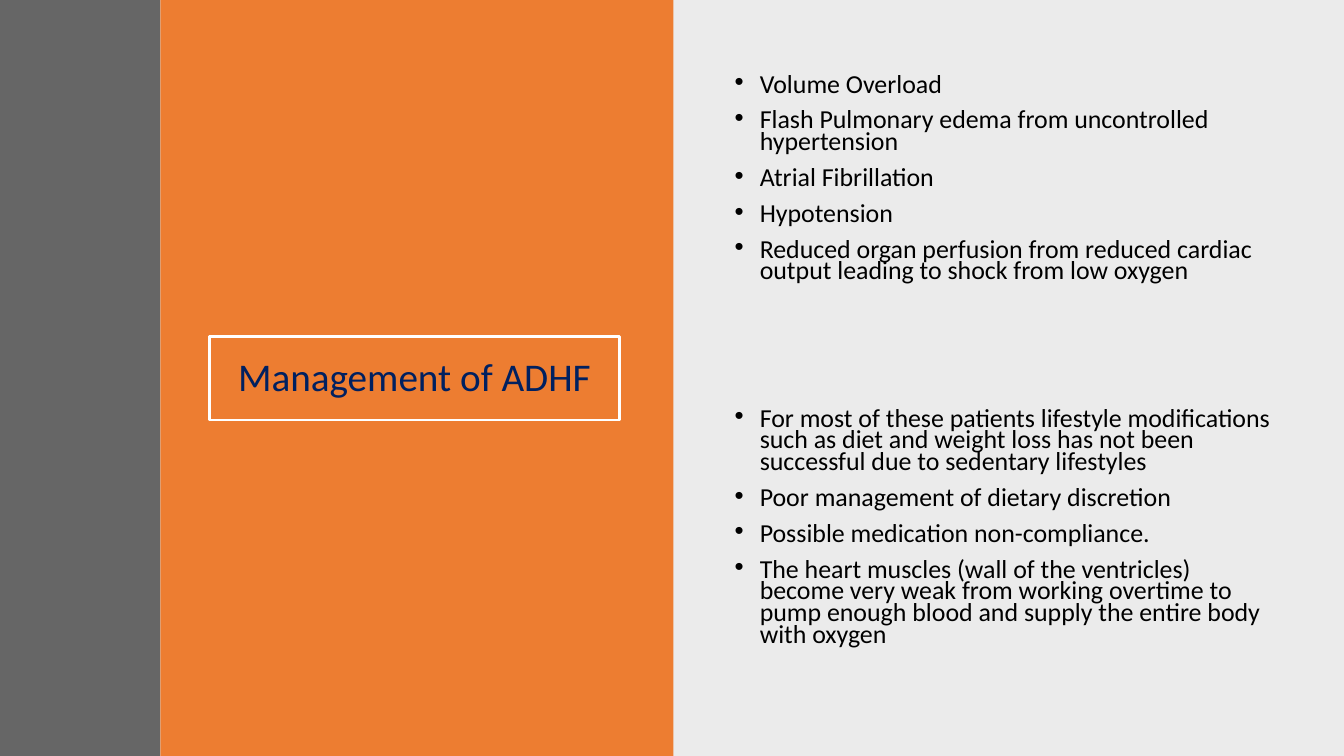
from lxml.etree import SubElement
from pptx import Presentation
from pptx.dml.color import RGBColor
from pptx.enum.shapes import MSO_SHAPE
from pptx.enum.text import MSO_ANCHOR as ANCHOR, MSO_AUTO_SIZE as AUTO, PP_ALIGN as ALIGN
from pptx.oxml.ns import qn
from pptx.util import Pt

WIDTH, HEIGHT = 960, 540
GREY_W, ORANGE_W = 114.5, 366.5

PROBLEMS = [
    "Volume Overload",
    "Flash Pulmonary edema from uncontrolled hypertension",
    "Atrial Fibrillation",
    "Hypotension",
    "Reduced organ perfusion from reduced cardiac output leading to shock from low oxygen",
]
CAUSES = [
    "For most of these patients lifestyle modifications such as diet and weight loss "
    "has not been successful due to sedentary lifestyles",
    "Poor management of dietary discretion",
    "Possible medication non-compliance.",
    "The heart muscles (wall of the ventricles) become very weak from working overtime "
    "to pump enough blood and supply the entire body with oxygen",
]


def rgb(color):
    return RGBColor.from_string(color)


class Deck:
    font = "Calibri"

    def __init__(self):
        self.prs = Presentation()
        self.prs.slide_width, self.prs.slide_height = Pt(WIDTH), Pt(HEIGHT)
        self.s = self.prs.slides.add_slide(self.prs.slide_layouts.get_by_name("Two Content"))

    def panel(self, left, width, color, opacity=100):
        """Add a full-height rectangle; opacity is in percent."""
        sp = self.s.shapes.add_shape(MSO_SHAPE.RECTANGLE, Pt(left), 0, Pt(width), Pt(HEIGHT))
        sp.shadow.inherit = False
        sp.line.fill.background()
        sp.fill.solid()
        sp.fill.fore_color.rgb = rgb(color)
        if opacity < 100:
            clr = sp.element.spPr.find(qn("a:solidFill"))[0]
            SubElement(clr, qn("a:alpha"), val=str(opacity * 1000))

    def place(self, sp, left, top, width, height, anchor):
        """Move a placeholder, bring it to the front and return its text frame."""
        sp.left, sp.top, sp.width, sp.height = Pt(left), Pt(top), Pt(width), Pt(height)
        sp.element.getparent().append(sp.element)
        tf = sp.text_frame
        tf.word_wrap, tf.auto_size, tf.vertical_anchor = True, AUTO.NONE, anchor
        return tf

    def run(self, p, text, size, color):
        r = p.add_run()
        r.text = text
        r.font.name, r.font.size, r.font.color.rgb = self.font, Pt(size), rgb(color)

    def title(self, text, *box):
        sp = self.s.shapes.title
        tf = self.place(sp, *box, ANCHOR.MIDDLE)
        sp.line.color.rgb, sp.line.width = rgb("FFFFFF"), Pt(2)
        p = tf.paragraphs[0]
        p.alignment, p.line_spacing = ALIGN.CENTER, 0.9
        self.run(p, text, 28, "002060")

    def bullets(self, idx, items, *box):
        tf = self.place(self.s.placeholders[idx], *box, ANCHOR.TOP)
        for i, item in enumerate(items):
            p = tf.add_paragraph() if i else tf.paragraphs[0]
            p.line_spacing, p.space_before = 0.7, Pt(10)
            pPr = p._p.get_or_add_pPr()
            pPr.set("marL", str(Pt(18)))
            pPr.set("indent", str(-Pt(18)))
            self.run(p, item, 18.5, "000000")


def main():
    deck = Deck()
    deck.panel(WIDTH / 2, WIDTH / 2, "000000", 8)
    deck.panel(GREY_W, ORANGE_W, "ED7D31")
    deck.title("Management of ADHF", 149.5, 240.5, 293, 59.5)
    deck.panel(0, GREY_W, "404040", 80)
    for idx, items, top in ((1, PROBLEMS, 50.5), (2, CAUSES, 289)):
        deck.bullets(idx, items, 517.5, top, 398, 201)
    deck.prs.save("out.pptx")


if __name__ == "__main__":
    main()
